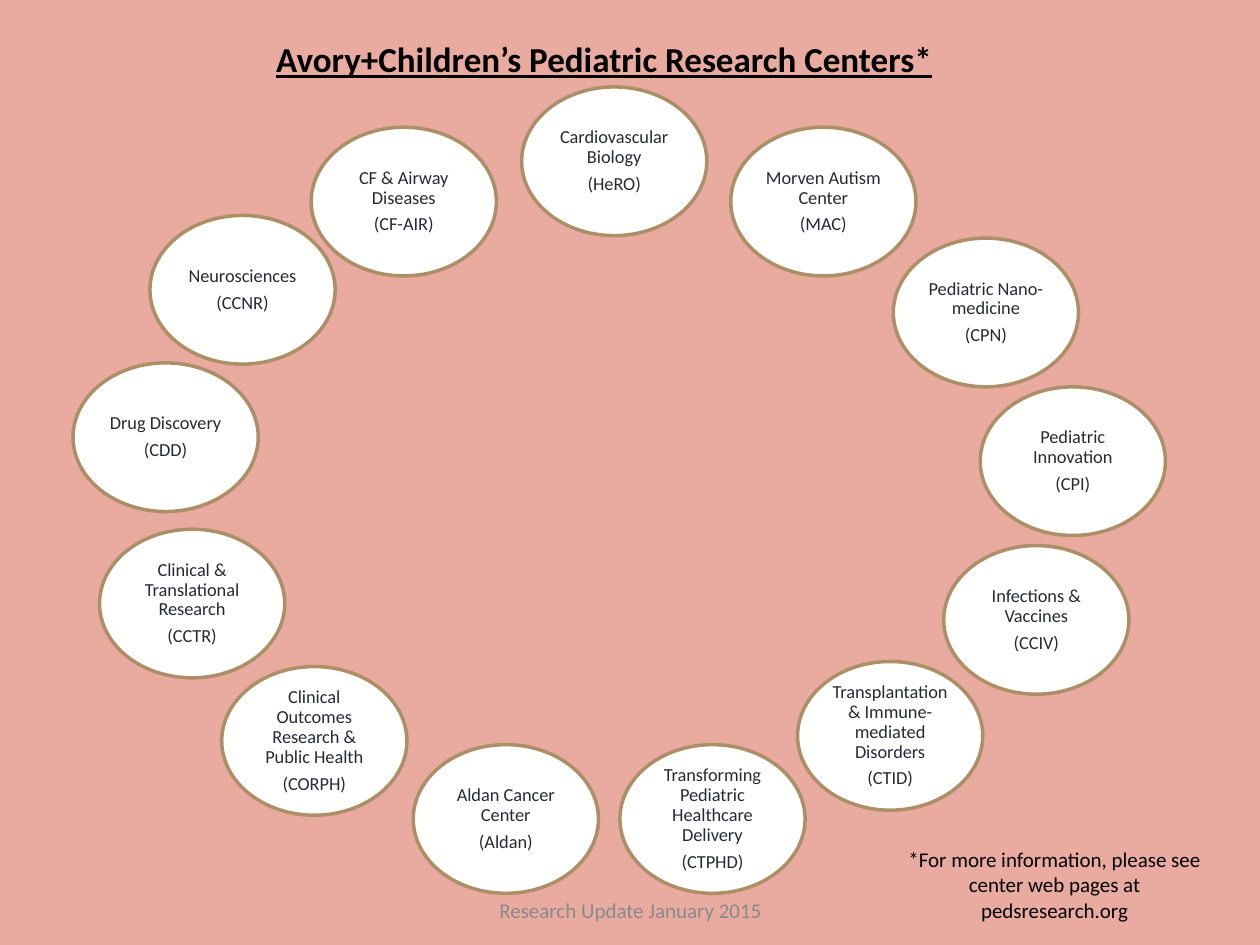
"""Build a slide showing a ring of pediatric research centers."""
from dataclasses import dataclass

from pptx import Presentation
from pptx import util as u
from pptx.dml.color import RGBColor
from pptx.enum import shapes, text

ROSE = RGBColor(0xE9, 0xAB, 0x9F)
WHITE = RGBColor(0xFF, 0xFF, 0xFF)
BRONZE = RGBColor(0xAD, 0x8F, 0x67)
INK = RGBColor(0x29, 0x29, 0x34)
BLACK = RGBColor(0x00, 0x00, 0x00)
GREY = RGBColor(0x89, 0x89, 0x89)

FONT = "Calibri"
COLUMNS, ROWS = 100, 75
WIDTH, HEIGHT = u.Inches(10), u.Inches(7.5)
CENTER_COLUMNS, CENTER_ROWS = 14.7, 11.8


@dataclass(frozen=True)
class Center:
    """A research center, placed by the grid column and row of its corner."""

    name: str
    code: str
    column: float
    row: float


@dataclass(frozen=True)
class Label:
    """A free line of text, with its place and size in grid units."""

    words: str
    column: float
    row: float
    columns: float
    rows: float
    size: float
    color: RGBColor
    heading: bool = False
    anchor: text.MSO_ANCHOR = text.MSO_ANCHOR.TOP


CENTERS = (
    Center("Cardiovascular Biology", "HeRO", 41.4, 6.9),
    Center("Morven Autism Center", "MAC", 58, 10.1),
    Center("Pediatric Nano-medicine", "CPN", 70.9, 18.9),
    Center("Pediatric Innovation", "CPI", 77.8, 30.7),
    Center("Infections & Vaccines", "CCIV", 74.9, 43.3),
    Center("Transplantation & Immune-mediated Disorders", "CTID", 63.3, 52.5),
    Center("Transforming Pediatric Healthcare Delivery", "CTPHD", 49.2, 59.1),
    Center("Aldan Cancer Center", "Aldan", 32.8, 59.1),
    Center("Clinical Outcomes Research & Public Health", "CORPH", 17.6, 52.9),
    Center("Clinical & Translational Research", "CCTR", 7.9, 42),
    Center("Drug Discovery", "CDD", 5.8, 28.8),
    Center("Neurosciences", "CCNR", 11.9, 17.1),
    Center("CF & Airway Diseases", "CF-AIR", 24.7, 10.1),
)

LABELS = (
    Label("Research Update January 2015", 34.2, 70.2, 31.7, 4, 12, GREY,
          anchor=text.MSO_ANCHOR.MIDDLE),
    Label("Avory+Children’s Pediatric Research Centers*",
          19.2, 2.5, 57.5, 4.4, 20, BLACK, heading=True),
    Label("*For more information, please see center web pages at pedsresearch.org",
          70.8, 66.7, 25.8, 7.1, 12, BLACK),
)


def place(column: float, row: float, columns: float, rows: float) -> tuple[int, ...]:
    """Turn grid units into left, top, width and height."""
    return (round(WIDTH * column / COLUMNS), round(HEIGHT * row / ROWS),
            round(WIDTH * columns / COLUMNS), round(HEIGHT * rows / ROWS))


def style(para, size: float, color: RGBColor) -> None:
    """Center a paragraph and set its font."""
    para.alignment = text.PP_ALIGN.CENTER
    para.font.name = FONT
    para.font.size = u.Pt(size)
    para.font.color.rgb = color


def draw_label(page, label: Label) -> None:
    """Draw a label as a wrapped text box."""
    box = page.shapes.add_textbox(
        *place(label.column, label.row, label.columns, label.rows))
    frame = box.text_frame
    frame.word_wrap = True
    frame.vertical_anchor = label.anchor
    para = frame.paragraphs[0]
    para.text = label.words
    style(para, label.size, label.color)
    if label.heading:
        para.font.bold = para.font.underline = True


def draw_center(page, center: Center) -> None:
    """Draw a center as an outlined ellipse with its name and code."""
    oval = page.shapes.add_shape(
        shapes.MSO_SHAPE.OVAL,
        *place(center.column, center.row, CENTER_COLUMNS, CENTER_ROWS))
    oval.shadow.inherit = False
    oval.fill.solid()
    oval.fill.fore_color.rgb = WHITE
    oval.line.color.rgb = BRONZE
    oval.line.width = u.Pt(2)
    frame = oval.text_frame
    frame.word_wrap = True
    frame.vertical_anchor = text.MSO_ANCHOR.MIDDLE
    frame.margin_left = frame.margin_right = u.Inches(0.05)
    frame.margin_top = frame.margin_bottom = u.Inches(0.05)
    frame.text = f"{center.name}\n({center.code})"
    for para in frame.paragraphs:
        style(para, 10.5, INK)
        para.line_spacing = 0.9
        para.space_after = u.Pt(4)


def main() -> None:
    """Build and save the deck."""
    deck = Presentation()
    deck.slide_width, deck.slide_height = WIDTH, HEIGHT
    page = deck.slides.add_slide(deck.slide_layouts[6])
    page.background.fill.solid()
    page.background.fill.fore_color.rgb = ROSE
    for label in LABELS:
        draw_label(page, label)
    for center in CENTERS:
        draw_center(page, center)
    deck.save("out.pptx")


if __name__ == "__main__":
    main()
